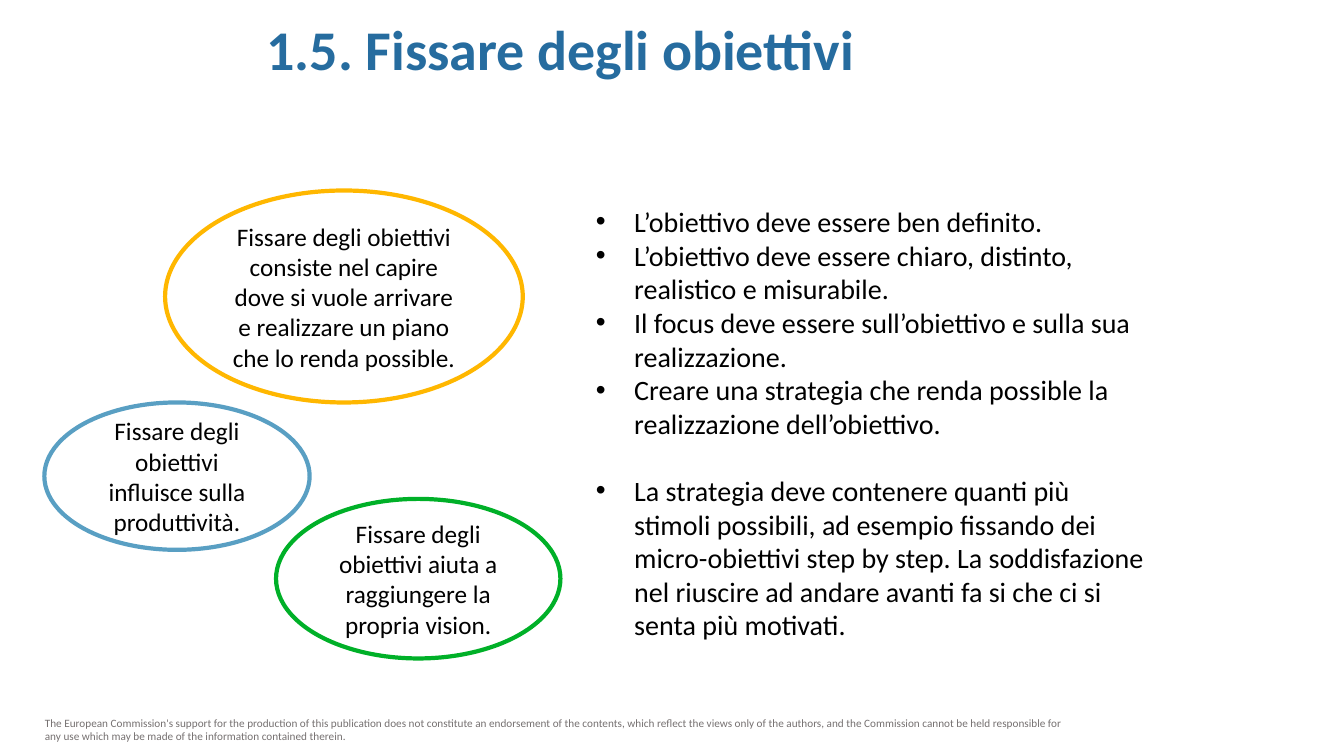
from pptx import Presentation
from pptx import util as u
from pptx.dml.color import RGBColor
from pptx.enum import shapes, text
from pptx.oxml.ns import qn
from lxml import etree

WIDE, HIGH = u.Inches(13.33), u.Inches(7.5)
FONT = "Calibri"
BLACK = RGBColor(0x00, 0x00, 0x00)
WHITE = RGBColor(0xFF, 0xFF, 0xFF)
GREY = RGBColor(0x76, 0x71, 0x71)
NAVY = RGBColor(0x26, 0x6C, 0x9F)
BLUE = RGBColor(0x59, 0x9F, 0xC3)
GREEN = RGBColor(0x00, 0xB0, 0x28)
GOLD = RGBColor(0xFF, 0xB7, 0x00)
LEFT, MID = text.PP_ALIGN.LEFT, text.PP_ALIGN.CENTER

TITLE = "1.5. Fissare degli obiettivi"
NOTICE = (
    "The European Commission's support for the production of this publication "
    "does not constitute an endorsement of the contents, which reflect the views "
    "only of the authors, and the Commission cannot be held responsible for any "
    "use which may be made of the information contained therein."
)
IDEAS = [
    ((44.9, 65.9, 55.1, 34.1), GREEN,
     "Fissare degli obiettivi aiuta a raggiungere la propria vision."),
    ((0, 45.3, 51.4, 31.5), BLUE,
     "Fissare degli obiettivi influisce sulla produttività."),
    ((23.4, 0, 69.3, 45.3), GOLD,
     "Fissare degli obiettivi consiste nel capire dove si vuole arrivare "
     "e realizzare un piano che lo renda possible."),
]
GOALS = [
    "L’obiettivo deve essere ben definito.",
    "L’obiettivo deve essere chiaro, distinto, realistico e misurabile.",
    "Il focus deve essere sull’obiettivo e sulla sua realizzazione.",
    "Creare una strategia che renda possible la realizzazione dell’obiettivo.",
]
STEPS = (
    "La strategia deve contenere quanti più stimoli possibili, ad esempio "
    "fissando dei micro-obiettivi step by step. La soddisfazione nel riuscire "
    "ad andare avanti fa si che ci si senta più motivati."
)


def part(box, share):
    """Return the part of a box given by percent shares."""
    x, y, w, h = box
    left, top, wide, high = share
    return (int(x + w * left / 100), int(y + h * top / 100),
            int(w * wide / 100), int(h * high / 100))


def write(para, words, size=20, color=BLACK, bold=False, align=LEFT,
          bullet=False, gap=0):
    """Fill a paragraph with formatted words."""
    if bullet:
        props = para._p.get_or_add_pPr()
        props.set("marL", str(u.Inches(0.38)))
        props.set("indent", str(-u.Inches(0.38)))
        etree.SubElement(props, qn("a:buFont"), typeface="Arial")
        etree.SubElement(props, qn("a:buChar"), char="•")
    para.alignment = align
    if gap:
        para.space_before = u.Pt(gap)
    run = para.add_run()
    run.text = words
    run.font.name, run.font.size = FONT, u.Pt(size)
    run.font.bold, run.font.color.rgb = bold, color


def frame(slide, box):
    """Add a wrapping text box and return its text frame."""
    body = slide.shapes.add_textbox(*box).text_frame
    body.word_wrap = True
    return body


def label(slide, box, words, **form):
    """Place one paragraph of text in the box."""
    write(frame(slide, box).paragraphs[0], words, **form)


def ideas(slide, box):
    """Place the outlined ovals within the box."""
    for share, color, words in IDEAS:
        oval = slide.shapes.add_shape(shapes.MSO_SHAPE.OVAL, *part(box, share))
        oval.shadow.inherit = False
        oval.fill.solid()
        oval.fill.fore_color.rgb = WHITE
        oval.line.color.rgb, oval.line.width = color, u.Pt(3)
        body = oval.text_frame
        body.word_wrap = True
        body.vertical_anchor = text.MSO_ANCHOR.MIDDLE
        write(body.paragraphs[0], words, size=18, align=MID)


def goals(slide, box):
    """Place the bulleted goals, with the last one set apart."""
    body = frame(slide, box)
    for i, words in enumerate(GOALS):
        para = body.add_paragraph() if i else body.paragraphs[0]
        write(para, words, bullet=True)
    write(body.add_paragraph(), STEPS, bullet=True, gap=24)


def main():
    """Build and save the slide."""
    deck = Presentation()
    deck.slide_width, deck.slide_height = WIDE, HIGH
    slide = deck.slides.add_slide(deck.slide_layouts[6])
    page = (0, 0, WIDE, HIGH)
    label(slide, part(page, (2.6, 94.1, 78.5, 4.9)), NOTICE, size=8, color=GREY)
    goals(slide, part(page, (43.6, 26.4, 42.4, 59.7)))
    label(slide, part(page, (18.7, 1.3, 46, 10.3)), TITLE,
          size=40, color=NAVY, bold=True, align=MID)
    ideas(slide, part(page, (3.3, 25.2, 38.4, 61.9)))
    deck.save("out.pptx")


if __name__ == "__main__":
    main()
